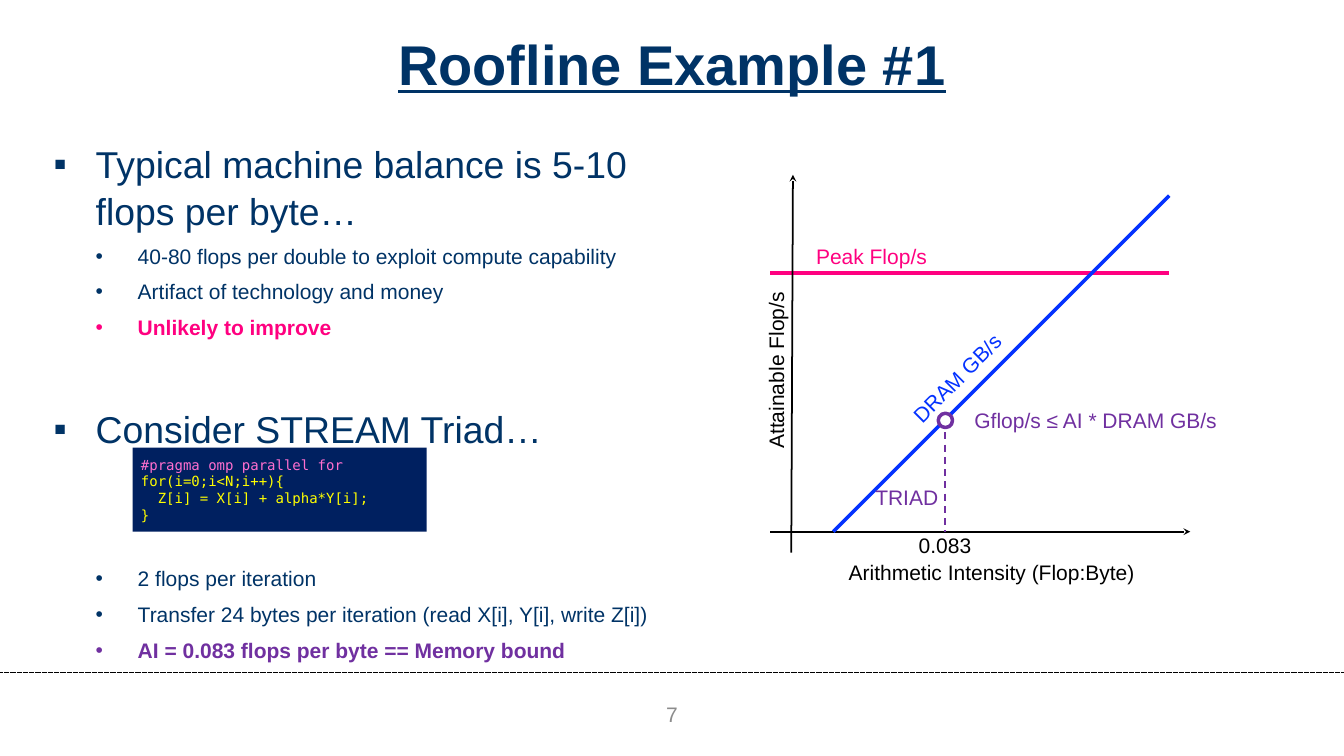
from dataclasses import dataclass
from lxml.etree import SubElement
from pptx import Presentation
from pptx.dml.color import RGBColor as RGB
from pptx.enum.dml import MSO_LINE_DASH_STYLE as Dash
from pptx.enum.shapes import MSO_CONNECTOR as Connector, MSO_SHAPE as Shape
from pptx.enum.text import MSO_ANCHOR as Anchor, PP_ALIGN as Align
from pptx.oxml.ns import qn
from pptx.util import Inches, Pt


@dataclass(frozen=True)
class Theme:
    font: str = "Arial"
    mono: str = "DejaVu Sans Mono"
    navy: str = "003366"
    pink: str = "FF0080"
    purple: str = "7030A0"
    blue: str = "0432FF"
    black: str = "000000"
    white: str = "FFFFFF"
    gray: str = "8C8C8C"
    code_back: str = "002060"
    code_pragma: str = "FF6FCF"
    code_text: str = "FFFF00"
    title_size: int = 48
    topic_size: int = 32
    text_size: int = 18
    code_size: int = 12


theme = Theme()


def add_run(paragraph, text, color, size=theme.text_size, font=theme.font, bold=False):
    run = paragraph.add_run()
    run.text = text
    run.font.name = font
    run.font.size = Pt(size)
    run.font.bold = bold
    run.font.color.rgb = RGB.from_string(color)
    return run


def add_line(start, end, color, width, dash=None, arrow=False):
    line = slide.shapes.add_connector(
        Connector.STRAIGHT, *(Inches(value) for value in (*start, *end)))
    line.line.color.rgb = RGB.from_string(color)
    line.line.width = Pt(width)
    if dash:
        line.line.dash_style = dash
    if arrow:
        SubElement(line.line._get_or_add_ln(), qn("a:tailEnd"), type="stealth")
    SubElement(line._element.spPr, qn("a:effectLst"))


deck = Presentation()
deck.slide_width, deck.slide_height = Inches(16), Inches(9)
slide = deck.slides.add_slide(deck.slide_layouts[5])

add_line((0, 8), (16, 8), theme.black, 0.5, Dash.ROUND_DOT)

title = slide.shapes.title
title.left, title.top = Inches(0.5), Inches(0)
title.width, title.height = Inches(15), Inches(1.5)
title.text_frame.vertical_anchor = Anchor.MIDDLE
heading = title.text_frame.paragraphs[0]
heading.alignment = Align.CENTER
add_run(heading, "Roofline Example #1", theme.navy, theme.title_size,
        bold=True).font.underline = True

points = [
    (0, 0, "Typical machine balance is 5-10 flops per byte…", theme.navy, False),
    (1, 8, "40-80 flops per double to exploit compute capability", theme.navy, False),
    (1, 8, "Artifact of technology and money", theme.navy, False),
    (1, 8, "Unlikely to improve", theme.pink, True),
    (0, 55, "Consider STREAM Triad…", theme.navy, False),
    (1, 97, "2 flops per iteration", theme.navy, False),
    (1, 8, "Transfer 24 bytes per iteration (read X[i], Y[i], write Z[i])", theme.navy, False),
    (1, 8, "AI = 0.083 flops per byte == Memory bound", theme.purple, True),
]
outline = slide.shapes.add_textbox(Inches(0.5), Inches(1.58), Inches(7.5), Inches(6.3)).text_frame
outline.word_wrap = True
outline.margin_left = outline.margin_right = Inches(0.14)
outline.margin_top = outline.margin_bottom = Inches(0.07)
for index, (level, gap, text, color, bold) in enumerate(points):
    point = outline.add_paragraph() if index else outline.paragraphs[0]
    point.level = level
    point.line_spacing = 1.05
    point.space_before = Pt(gap)
    props = point._p.get_or_add_pPr()
    props.set("marL", str(Inches(0.5 * (level + 1))))
    props.set("indent", str(Inches(-0.5)))
    SubElement(props, qn("a:buFont"), typeface=theme.font)
    SubElement(props, qn("a:buChar"), char="▪•"[level])
    add_run(point, text, color, (theme.topic_size, theme.text_size)[level], bold=bold)

add_line((9.17, 3.25), (13.92, 3.25), theme.pink, 3)
add_line((9.17, 6.33), (14.17, 6.33), theme.black, 1.5, arrow=True)
add_line((9.42, 6.58), (9.44, 2.08), theme.black, 1.5, arrow=True)
add_line((9.92, 6.33), (13.92, 2.33), theme.blue, 3)
add_line((11.25, 5), (11.25, 6.33), theme.purple, 1.5, Dash.DASH)

triad_point = slide.shapes.add_shape(
    Shape.OVAL, Inches(11.17), Inches(4.92), Inches(0.17), Inches(0.17))
triad_point.shadow.inherit = False
triad_point.fill.solid()
triad_point.fill.fore_color.rgb = RGB.from_string(theme.white)
triad_point.line.color.rgb = RGB.from_string(theme.purple)
triad_point.line.width = Pt(3)

labels = [
    ("Peak Flop/s", 9.61, 2.85, 1.53, 0.4, 0, Align.CENTER, theme.pink),
    ("Attainable Flop/s", 7.32, 4.21, 3.83, 0.4, 270, Align.CENTER, theme.black),
    ("DRAM GB/s", 10.6, 4.3, 1.58, 0.4, 315, Align.CENTER, theme.blue),
    ("Arithmetic Intensity (Flop:Byte)", 9.43, 6.65, 4.75, 0.33, 0, Align.CENTER, theme.black),
    ("0.083", 10.5, 6.33, 1.5, 0.33, 0, Align.CENTER, theme.black),
    ("TRIAD", 10.17, 5.67, 1, 0.5, 0, Align.RIGHT, theme.purple),
    ("Gflop/s ≤ AI * DRAM GB/s", 11.6, 4.75, 3.2, 0.5, 0, Align.LEFT, theme.purple),
    ("7", 6.5, 8.25, 3, 0.5, 0, Align.CENTER, theme.gray),
]
for text, left, top, width, height, angle, align, color in labels:
    label = slide.shapes.add_textbox(*(Inches(value) for value in (left, top, width, height)))
    label.rotation = angle
    frame = label.text_frame
    frame.word_wrap = True
    frame.vertical_anchor = Anchor.MIDDLE
    frame.margin_left = frame.margin_right = frame.margin_top = frame.margin_bottom = 0
    frame.paragraphs[0].alignment = align
    add_run(frame.paragraphs[0], text, color)

code = slide.shapes.add_shape(
    Shape.RECTANGLE, Inches(1.58), Inches(5.33), Inches(3.5), Inches(1))
code.shadow.inherit = False
code.fill.solid()
code.fill.fore_color.rgb = RGB.from_string(theme.code_back)
code.line.fill.background()
code.text_frame.vertical_anchor = Anchor.MIDDLE
code_lines = [
    ("#pragma omp parallel for", theme.code_pragma),
    ("for(i=0;i<N;i++){", theme.code_text),
    ("  Z[i] = X[i] + alpha*Y[i];", theme.code_text),
    ("}", theme.code_text),
]
for index, (text, color) in enumerate(code_lines):
    code_line = code.text_frame.add_paragraph() if index else code.text_frame.paragraphs[0]
    code_line.alignment = Align.LEFT
    add_run(code_line, text, color, theme.code_size, theme.mono)

deck.save("out.pptx")
